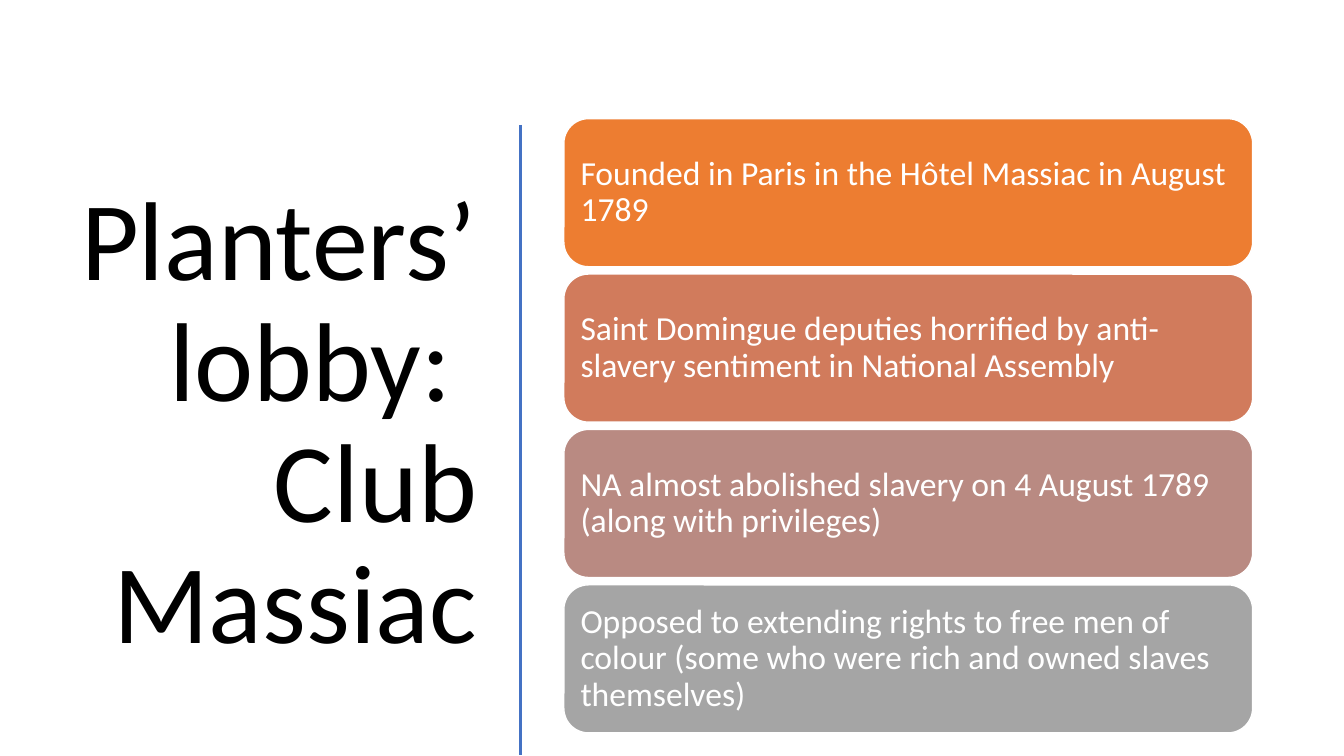
from lxml.etree import SubElement
from pptx import Presentation
from pptx.dml.color import RGBColor
from pptx.enum.shapes import MSO_CONNECTOR, MSO_SHAPE
from pptx.enum.text import MSO_ANCHOR, MSO_AUTO_SIZE, PP_ALIGN
from pptx.oxml.ns import qn
from pptx.util import Pt

EMU_PER_PX = 9525
COLORS = {
    "title": "000000",
    "white": "FFFFFF",
    "divider": "4472C4",
    "orange": "ED7D31",
    "terracotta": "D17B5C",
    "rose": "B98A82",
    "grey": "A5A5A5",
}
POINTS = [
    ("orange", "Founded in Paris in the Hôtel Massiac in August 1789"),
    ("terracotta", "Saint Domingue deputies horrified by anti-slavery sentiment in National Assembly"),
    ("rose", "NA almost abolished slavery on 4 August 1789 (along with privileges)"),
    ("grey", "Opposed to extending rights to free men of colour "
             "(some who were rich and owned slaves themselves)"),
]
CARD_TOP, CARD_PITCH = 113, 148


def px(n):
    return n * EMU_PER_PX


def rgb(name):
    return RGBColor.from_string(COLORS[name])


class SlideBuilder:
    font = "Calibri"

    def __init__(self, prs):
        self.slide = prs.slides.add_slide(prs.slide_layouts[5])

    def set_text(self, tf, text, size, color, align):
        tf.text = text
        tf.word_wrap = True
        tf.auto_size = MSO_AUTO_SIZE.NONE
        tf.vertical_anchor = MSO_ANCHOR.MIDDLE
        p = tf.paragraphs[0]
        p.alignment = align
        p.line_spacing = 0.9
        for r in p.runs:
            r.font.name = self.font
            r.font.size = Pt(size)
            r.font.color.rgb = rgb(color)

    def title(self, text, x, y, w, h):
        sp = self.slide.shapes.title
        sp.left, sp.top, sp.width, sp.height = map(px, (x, y, w, h))
        self.set_text(sp.text_frame, text, 80, "title", PP_ALIGN.RIGHT)

    def line(self, x1, y1, x2, y2, color, width):
        cxn = self.slide.shapes.add_connector(
            MSO_CONNECTOR.STRAIGHT, *map(px, (x1, y1, x2, y2)))
        cxn.line.color.rgb = rgb(color)
        cxn.line.width = Pt(width)
        SubElement(cxn.element.spPr, qn("a:effectLst"))

    def card(self, text, x, y, w, h, fill):
        sp = self.slide.shapes.add_shape(
            MSO_SHAPE.ROUNDED_RECTANGLE, *map(px, (x, y, w, h)))
        sp.shadow.inherit = False
        sp.fill.solid()
        sp.fill.fore_color.rgb = rgb(fill)
        sp.line.color.rgb = rgb("white")
        sp.line.width = Pt(1)
        tf = sp.text_frame
        tf.margin_left = tf.margin_right = tf.margin_top = tf.margin_bottom = px(9)
        self.set_text(tf, text, 24, "white", PP_ALIGN.LEFT)


def main():
    prs = Presentation()
    prs.slide_width, prs.slide_height = px(1280), px(720)
    s = SlideBuilder(prs)
    s.title("Planters’ lobby: \vClub Massiac", 50, 112, 414, 587)
    s.line(496, 119, 496, 719, "divider", 2)
    for i, (fill, text) in enumerate(POINTS):
        s.card(text, 537, CARD_TOP + i * CARD_PITCH, 656, 141, fill)
    prs.save("out.pptx")


if __name__ == "__main__":
    main()
